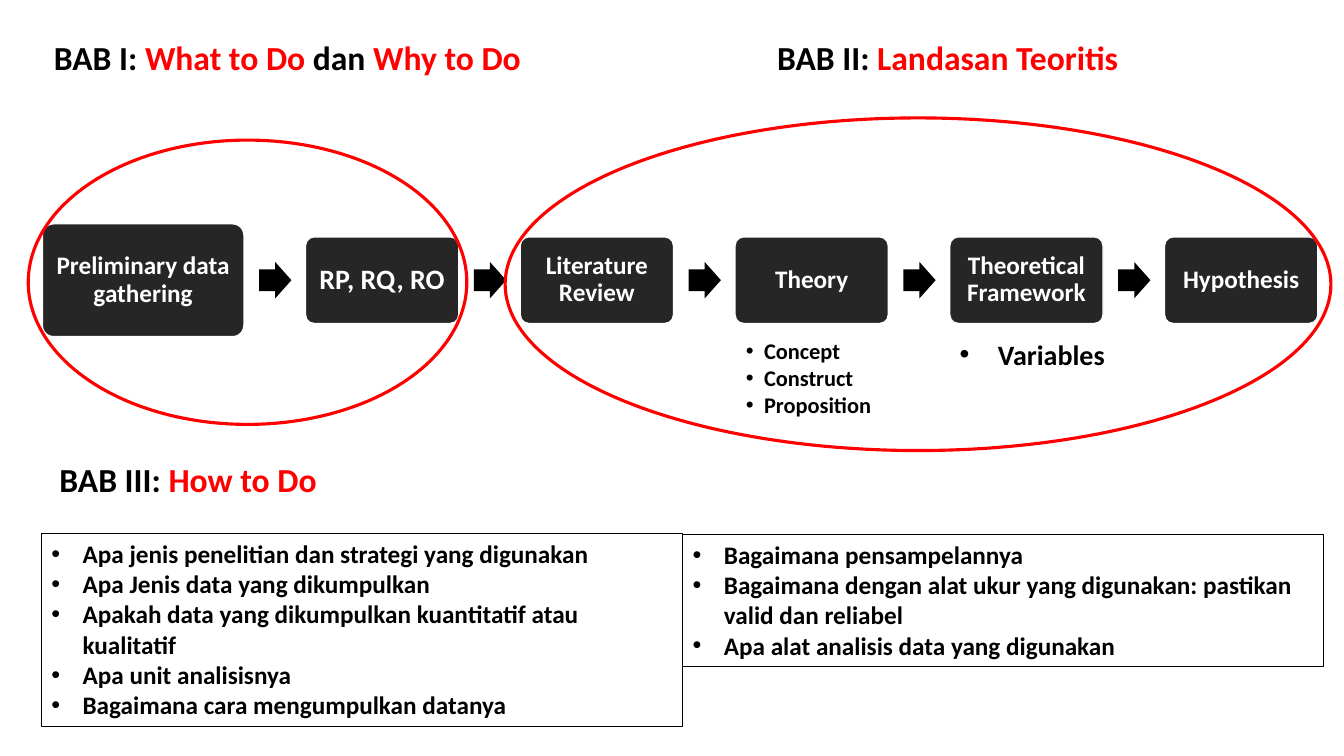
from lxml import etree
from pptx import Presentation
from pptx.dml.color import RGBColor
from pptx.enum.shapes import MSO_SHAPE
from pptx.enum.text import MSO_ANCHOR, MSO_AUTO_SIZE, PP_ALIGN
from pptx.oxml.ns import qn
from pptx.util import Emu, Pt

ROUNDED = MSO_SHAPE.ROUNDED_RECTANGLE
ARROW = MSO_SHAPE.RIGHT_ARROW
OVAL = MSO_SHAPE.OVAL
MIDDLE, TOP = MSO_ANCHOR.MIDDLE, MSO_ANCHOR.TOP
CENTER, LEFT = PP_ALIGN.CENTER, PP_ALIGN.LEFT
NO_FIT = MSO_AUTO_SIZE.NONE

PX = 9144  # 100 px to the inch
FONT = "Calibri"
BLACK, WHITE, RED, CHARCOAL = "000000", "FFFFFF", "FF0000", "262626"
COMPARISON_LAYOUT = 4

STEP_PITCH = 213
FIRST_STEP = ("Preliminary data gathering", 18)
NEXT_STEPS = [
    ("RP, RQ, RO", 20),
    ("Literature Review", 18),
    ("Theory", 18),
    ("Theoretical Framework", 18),
    ("Hypothesis", 18),
]
THEORY_PARTS = ["Concept", "Construct", "Proposition"]
DESIGN_QUESTIONS = [
    "Apa jenis penelitian dan strategi yang digunakan",
    "Apa Jenis data yang dikumpulkan",
    "Apakah data yang dikumpulkan kuantitatif atau kualitatif",
    "Apa unit analisisnya",
    "Bagaimana cara mengumpulkan datanya",
]
ANALYSIS_QUESTIONS = [
    "Bagaimana pensampelannya",
    "Bagaimana dengan alat ukur yang digunakan: pastikan valid dan reliabel",
    "Apa alat analisis data yang digunakan",
]


def px(length):
    return Emu(length * PX)


def color(value):
    return RGBColor.from_string(value)


def place(shape, box):
    shape.left, shape.top, shape.width, shape.height = map(px, box)


def add_run(paragraph, text, size, ink):
    run = paragraph.add_run()
    run.text = text
    run.font.name = FONT
    run.font.size = Pt(size)
    run.font.bold = True
    run.font.color.rgb = color(ink)


def set_bullet(paragraph, indent):
    properties = paragraph._p.get_or_add_pPr()
    properties.set("marL", str(px(indent)))
    properties.set("indent", str(-px(indent)))
    etree.SubElement(properties, qn("a:buFont")).set("typeface", "Arial")
    etree.SubElement(properties, qn("a:buChar")).set("char", "•")


def fill_list(shape, box, items, size, indent):
    """Place a shape and write its bulleted items."""
    place(shape, box)
    frame = shape.text_frame
    frame.word_wrap = True
    frame.auto_size = NO_FIT
    frame.vertical_anchor = TOP
    for index, item in enumerate(items):
        paragraph = frame.add_paragraph() if index else frame.paragraphs[0]
        set_bullet(paragraph, indent)
        paragraph.alignment = LEFT
        paragraph.space_before = Pt(0)
        add_run(paragraph, item, size, BLACK)


def fill_question_box(placeholder, box, questions):
    fill_list(placeholder, box, questions, 18, 31)
    placeholder.line.color.rgb = color(BLACK)
    placeholder.line.width = Pt(0.5)


def add_note_list(slide, box, items, size, indent):
    left, top, width, height = map(px, box)
    note = slide.shapes.add_textbox(left, top, width, height)
    fill_list(note, box, items, size, indent)


def fill_heading(placeholder, box, parts):
    """Write a chapter heading from (text, colour) parts."""
    place(placeholder, box)
    frame = placeholder.text_frame
    frame.word_wrap = True
    frame.auto_size = NO_FIT
    frame.vertical_anchor = MIDDLE
    paragraph = frame.paragraphs[0]
    paragraph.alignment = CENTER
    paragraph.space_before = Pt(0)
    for text, ink in parts:
        add_run(paragraph, text, 24, ink)


def add_figure(slide, kind, box, fill=None, line=None, line_width=1):
    figure = slide.shapes.add_shape(kind, *map(px, box))
    figure.shadow.inherit = False
    if fill:
        figure.fill.solid()
        figure.fill.fore_color.rgb = color(fill)
    else:
        figure.fill.background()
    if line:
        figure.line.color.rgb = color(line)
        figure.line.width = Pt(line_width)
    else:
        figure.line.fill.background()
    return figure


def add_step(slide, box, label, size):
    step = add_figure(slide, ROUNDED, box, CHARCOAL, WHITE)
    step.adjustments[0] = 0.1
    frame = step.text_frame
    frame.word_wrap = True
    frame.vertical_anchor = MIDDLE
    frame.margin_left = frame.margin_right = px(7)
    frame.margin_top = frame.margin_bottom = px(7)
    paragraph = frame.paragraphs[0]
    paragraph.alignment = CENTER
    paragraph.line_spacing = 0.9
    add_run(paragraph, label, size, WHITE)


def add_step_arrow(slide, left):
    arrow = add_figure(slide, ARROW, (left, 260, 32, 36), BLACK)
    arrow.adjustments[0] = 0.6
    arrow.adjustments[1] = 0.5


def add_research_chain(slide):
    add_step(slide, (42, 222, 200, 112), *FIRST_STEP)
    for index, (label, size) in enumerate(NEXT_STEPS):
        left = 303 + index * STEP_PITCH
        add_step_arrow(slide, left - 46)
        add_step(slide, (left, 235, 152, 86), label, size)


def main():
    deck = Presentation()
    deck.slide_width, deck.slide_height = px(1333), px(750)
    slide = deck.slides.add_slide(deck.slide_layouts[COMPARISON_LAYOUT])
    chapter_one, chapter_two, design, chapter_three, analysis = slide.placeholders

    fill_heading(chapter_one, (17, 33, 536, 48), [
        ("BAB I: ", BLACK), ("What to Do ", RED),
        ("dan", BLACK), (" Why to Do", RED)])
    fill_heading(chapter_two, (721, 33, 438, 48), [
        ("BAB II: ", BLACK), ("Landasan Teoritis", RED)])
    fill_heading(chapter_three, (41, 451, 291, 48), [
        ("BAB III: ", BLACK), ("How to Do", RED)])
    fill_question_box(design, (41, 529, 636, 192), DESIGN_QUESTIONS)
    fill_question_box(analysis, (677, 530, 636, 131), ANALYSIS_QUESTIONS)

    add_note_list(slide, (942, 330, 186, 44), ["Variables"], 20, 38)
    add_note_list(slide, (730, 330, 157, 91), THEORY_PARTS, 16, 18)
    add_research_chain(slide)
    for chapter_ring in [(28, 139, 435, 282), (501, 117, 819, 330)]:
        add_figure(slide, OVAL, chapter_ring, line=RED, line_width=2.25)

    deck.save("out.pptx")


if __name__ == "__main__":
    main()
